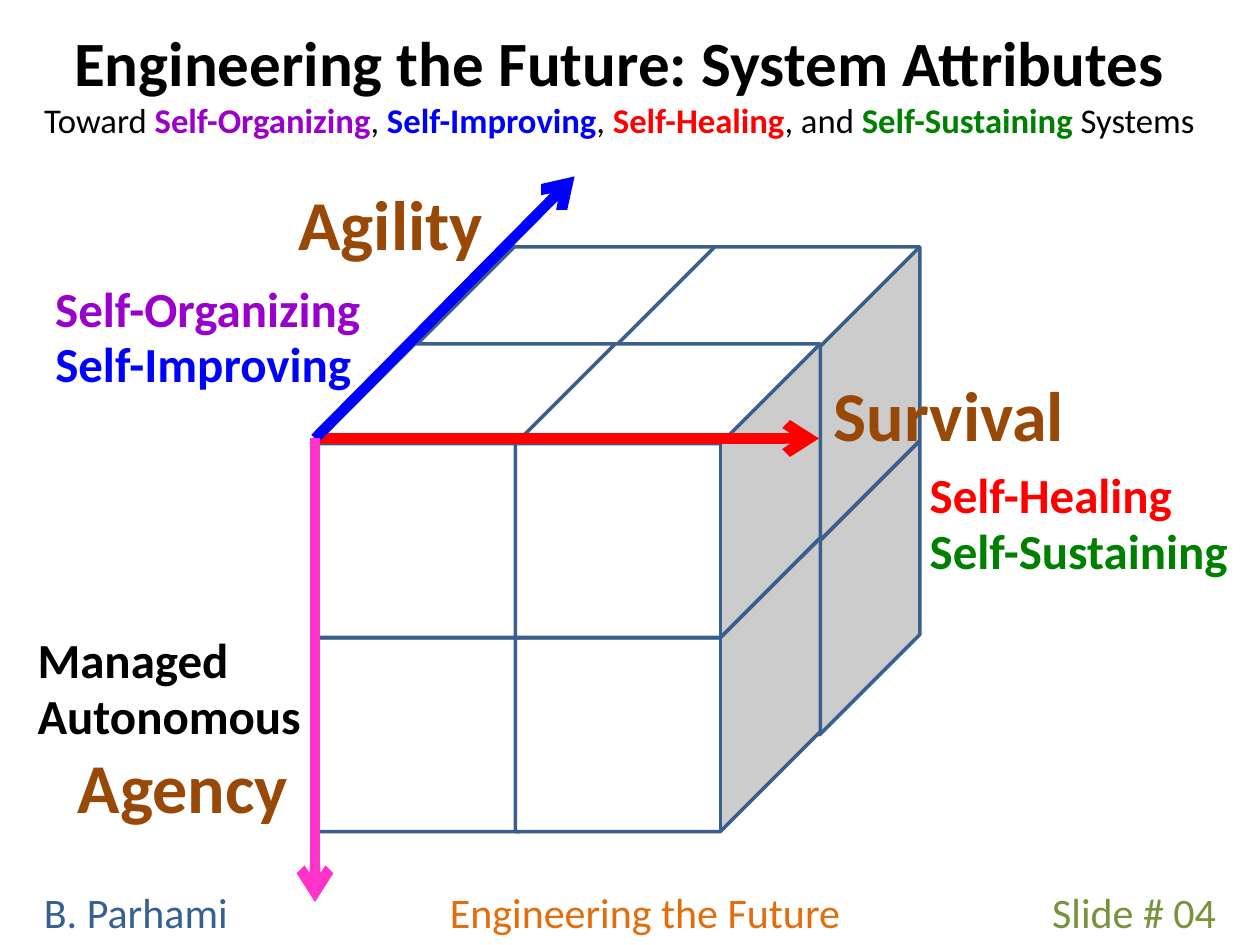
import dataclasses

import lxml.etree
import pptx
import pptx.dml.color
import pptx.enum.shapes
import pptx.enum.text
import pptx.oxml.ns
import pptx.util

Inches = pptx.util.Inches
Pt = pptx.util.Pt
Align = pptx.enum.text.PP_ALIGN
Fit = pptx.enum.text.MSO_AUTO_SIZE
qn = pptx.oxml.ns.qn


@dataclasses.dataclass(frozen=True)
class Theme:
    font: str = "Calibri"
    black: str = "000000"
    white: str = "FFFFFF"
    edge: str = "3A5F8C"
    brown: str = "984807"
    purple: str = "9900CC"
    blue: str = "0000FF"
    red: str = "FF0000"
    green: str = "008000"
    pink: str = "FF33CC"
    author: str = "376092"
    topic: str = "E46C0A"
    number: str = "77933C"
    title: float = 36
    sub: float = 19.8
    foot: float = 24
    axis: float = 40
    label: float = 28


theme = Theme()


def color(code):
    return pptx.dml.color.RGBColor.from_string(code)


def add_run(para, text, size, code, bold=False):
    run = para.add_run()
    run.text = text
    run.font.name = theme.font
    run.font.size = Pt(size)
    run.font.bold = bold
    run.font.color.rgb = color(code)


def add_title(slide):
    title = slide.shapes.title
    title.left, title.top = Inches(0.08), Inches(0.05)
    title.width, title.height = Inches(9.67), Inches(1.2)
    frame = title.text_frame
    frame.auto_size = Fit.NONE
    frame.vertical_anchor = pptx.enum.text.MSO_ANCHOR.MIDDLE
    para = frame.paragraphs[0]
    para.alignment = Align.CENTER
    add_run(para, "Engineering the Future: System Attributes", theme.title, theme.black, True)
    para.add_line_break()
    for text, code in (
        ("Toward ", theme.black),
        ("Self-Organizing", theme.purple),
        (", ", theme.black),
        ("Self-Improving", theme.blue),
        (", ", theme.black),
        ("Self-Healing", theme.red),
        (", and ", theme.black),
        ("Self-Sustaining", theme.green),
        (" Systems", theme.black),
    ):
        add_run(para, text, theme.sub, code, code != theme.black)


def add_text(slide, box, text, size, code, bold=True, align=Align.LEFT, wrap=False):
    frame = slide.shapes.add_textbox(*map(Inches, box)).text_frame
    frame.word_wrap = wrap
    frame.auto_size = Fit.SHAPE_TO_FIT_TEXT
    para = frame.paragraphs[0]
    para.alignment = align
    add_run(para, text, size, code, bold)


def add_cube(slide, left, top):
    kind = pptx.enum.shapes.MSO_SHAPE.CUBE
    cube = slide.shapes.add_shape(kind, Inches(left), Inches(top), Inches(2.42), Inches(2.33))
    cube.adjustments[0] = 0.34
    cube.shadow.inherit = False
    cube.fill.solid()
    cube.fill.fore_color.rgb = color(theme.white)
    cube.line.color.rgb = color(theme.edge)
    cube.line.width = Pt(2)


def add_block(slide):
    back = ((1, 1), (0, 0), (1, 0))
    front = ((0, 1), (1, 1), (0, 0), (1, 0))
    for left, top, cells in ((3.29, 1.96, back), (2.5, 2.73, front)):
        for col, row in cells:
            add_cube(slide, left + 1.59 * col, top + 1.54 * row)


def add_axis(slide, start, end, code):
    kind = pptx.enum.shapes.MSO_CONNECTOR.STRAIGHT
    axis = slide.shapes.add_connector(kind, *map(Inches, start + end))
    axis.line.color.rgb = color(code)
    axis.line.width = Pt(6)
    props = axis._element.find(qn("p:spPr"))
    lxml.etree.SubElement(props.find(qn("a:ln")), qn("a:tailEnd"), type="arrow")
    lxml.etree.SubElement(props, qn("a:effectLst"))


def add_foot(slide):
    for left, width, text, code, align in (
        (0.25, 2.08, "B. Parhami", theme.author, Align.LEFT),
        (2.33, 5.58, "Engineering the Future", theme.topic, Align.CENTER),
        (7.92, 1.83, "Slide # 04", theme.number, Align.RIGHT),
    ):
        add_text(slide, (left, 6.99, width, 0.5), text, theme.foot, code, False, align, True)


def main():
    deck = pptx.Presentation()
    deck.slide_width, deck.slide_height = Inches(10), Inches(7.5)
    slide = deck.slides.add_slide(deck.slide_layouts[5])
    add_title(slide)
    add_foot(slide)
    add_block(slide)

    start = (2.5, 3.48)
    add_axis(slide, start, (6.5, 3.48), theme.red)
    add_axis(slide, start, (4.56, 1.4), theme.blue)
    add_axis(slide, start, (2.5, 7.16), theme.pink)

    for left, top, width, text in (
        (6.52, 2.9, 2.05, "Survival"),
        (2.27, 1.38, 1.69, "Agility"),
        (0.52, 5.85, 1.89, "Agency"),
    ):
        add_text(slide, (left, top, width, 0.77), text, theme.axis, theme.brown)

    for left, top, pair in (
        (7.28, 3.64, (("Self-Healing", 2.16, theme.red), ("Self-Sustaining", 2.6, theme.green))),
        (0.34, 2.16, (("Self-Organizing", 2.66, theme.purple), ("Self-Improving", 2.59, theme.blue))),
        (0.2, 4.95, (("Managed", 1.74, theme.black), ("Autonomous", 2.31, theme.black))),
    ):
        for row, (text, width, code) in enumerate(pair):
            add_text(slide, (left, top + 0.44 * row, width, 0.57), text, theme.label, code)

    deck.save("out.pptx")


if __name__ == "__main__":
    main()
